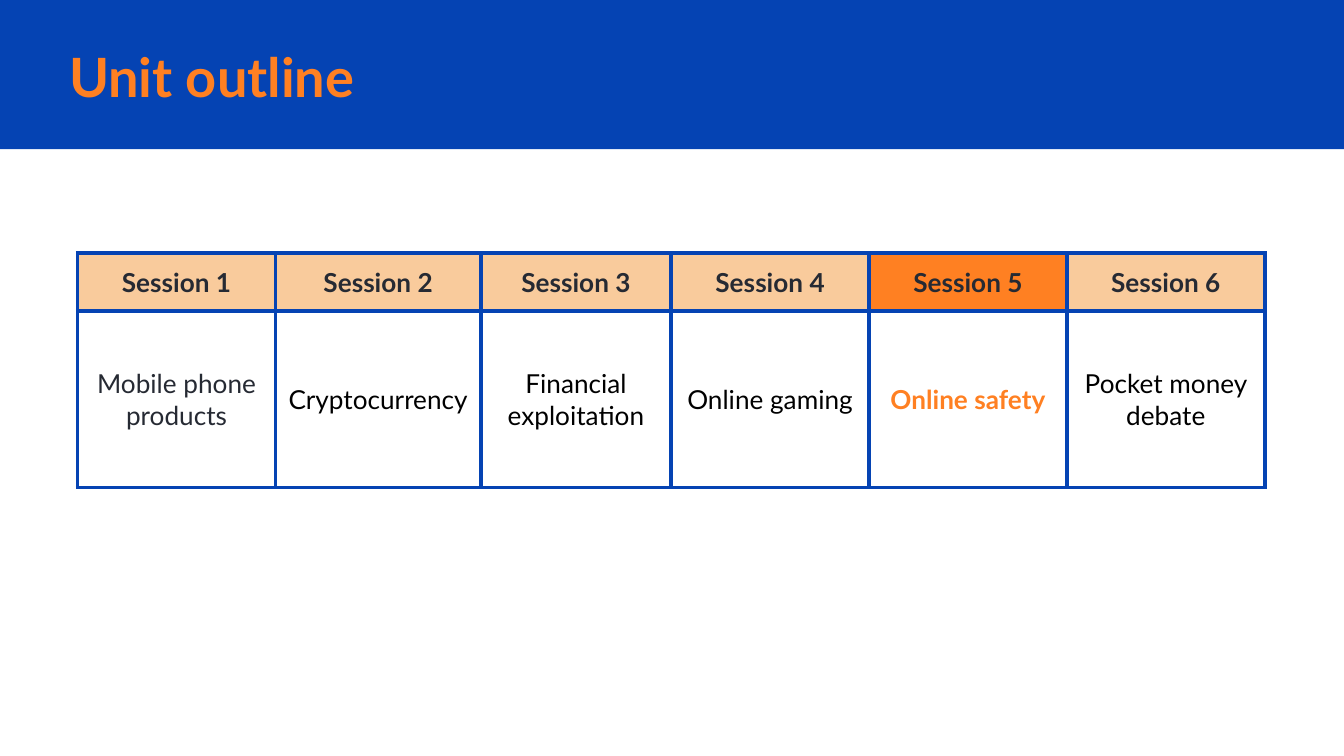
from pptx import Presentation
from pptx.dml.color import RGBColor as RGB
from pptx.enum.shapes import MSO_SHAPE as Shape
from pptx.enum.text import MSO_ANCHOR as Anchor, PP_ALIGN as Align
from pptx.oxml import parse_xml
from pptx.oxml.ns import nsdecls
from pptx.util import Pt

HUES = {
    "blue": "0543B3",
    "orange": "FF8022",
    "peach": "F9CB9C",
    "ink": "262A33",
    "black": "000000",
}
SIDES = ("L", "R", "T", "B")
MARGINS = ("margin_left", "margin_right", "margin_top", "margin_bottom")


def hue(name):
    return RGB.from_string(HUES[name])


class Deck:
    """Holds the style and the current slide."""

    font = "Lato"
    rule = 2.25

    def __init__(self, wide, high):
        self.prs = Presentation()
        self.prs.slide_width, self.prs.slide_height = Pt(wide), Pt(high)
        self.slide = self.prs.slides.add_slide(self.prs.slide_layouts[5])

    def style(self, para, size, color, bold, align):
        para.alignment = align
        form = {"name": self.font, "size": Pt(size), "bold": bold}
        for key, value in form.items():
            setattr(para.font, key, value)
        para.font.color.rgb = hue(color)

    def pad(self, item, gap):
        for key in MARGINS:
            setattr(item, key, Pt(gap))
        item.vertical_anchor = Anchor.MIDDLE

    def band(self, box, color):
        """Draw a plain bar behind everything else."""
        bar = self.slide.shapes.add_shape(Shape.RECTANGLE, *map(Pt, box))
        bar.shadow.inherit = False
        bar.fill.solid()
        bar.fill.fore_color.rgb = hue(color)
        bar.line.fill.background()
        self.slide.shapes._spTree.insert(2, bar._element)

    def title(self, text, box, size, color):
        head = self.slide.shapes.title
        for key, value in zip(("left", "top", "width", "height"), box):
            setattr(head, key, Pt(value))
        frame = head.text_frame
        frame.text = text
        frame.word_wrap = True
        self.pad(frame, 7.2)
        self.style(frame.paragraphs[0], size, color, True, Align.LEFT)

    def border(self, cell, color):
        props = cell._tc.get_or_add_tcPr()
        for side in SIDES:
            props.append(parse_xml(
                f'<a:ln{side} {nsdecls("a")} w="{Pt(self.rule)}">'
                f'<a:solidFill><a:srgbClr val="{HUES[color]}"/></a:solidFill>'
                f'</a:ln{side}>'))

    def cell(self, cell, text, color, bold, gap, fill=None):
        self.border(cell, "blue")
        if fill:
            cell.fill.solid()
            cell.fill.fore_color.rgb = hue(fill)
        else:
            cell.fill.background()
        cell.text = text
        self.pad(cell, gap)
        self.style(cell.text_frame.paragraphs[0], 14, color, bold, Align.CENTER)

    def table(self, left, top, cols, rows, topics, now):
        """Lay out the sessions, with session number now picked out."""
        box = map(Pt, (left, top, sum(cols), sum(rows)))
        grid = self.slide.shapes.add_table(len(rows), len(cols), *box).table
        for col, wide in zip(grid.columns, cols):
            col.width = Pt(wide)
        for row, high in zip(grid.rows, rows):
            row.height = Pt(high)
        for i, (topic, color) in enumerate(topics):
            live = i + 1 == now
            self.cell(grid.cell(0, i), f"Session {i + 1}", "ink", True, 7.2,
                      "orange" if live else "peach")
            self.cell(grid.cell(1, i), topic, color, live, 5)


def main():
    deck = Deck(720, 405)
    deck.band((0, 0, 720, 80), "blue")
    deck.title("Unit outline", (29.8, 20.5, 609, 40), 29, "orange")
    topics = [
        ("Mobile phone products", "ink"),
        ("Cryptocurrency", "black"),
        ("Financial exploitation", "black"),
        ("Online gaming", "black"),
        ("Online safety", "orange"),
        ("Pocket money debate", "black"),
    ]
    cols = [106, 110, 102, 106, 106, 106]
    deck.table(41.6, 135.5, cols, [31, 94.5], topics, now=5)
    deck.prs.save("out.pptx")


if __name__ == "__main__":
    main()
